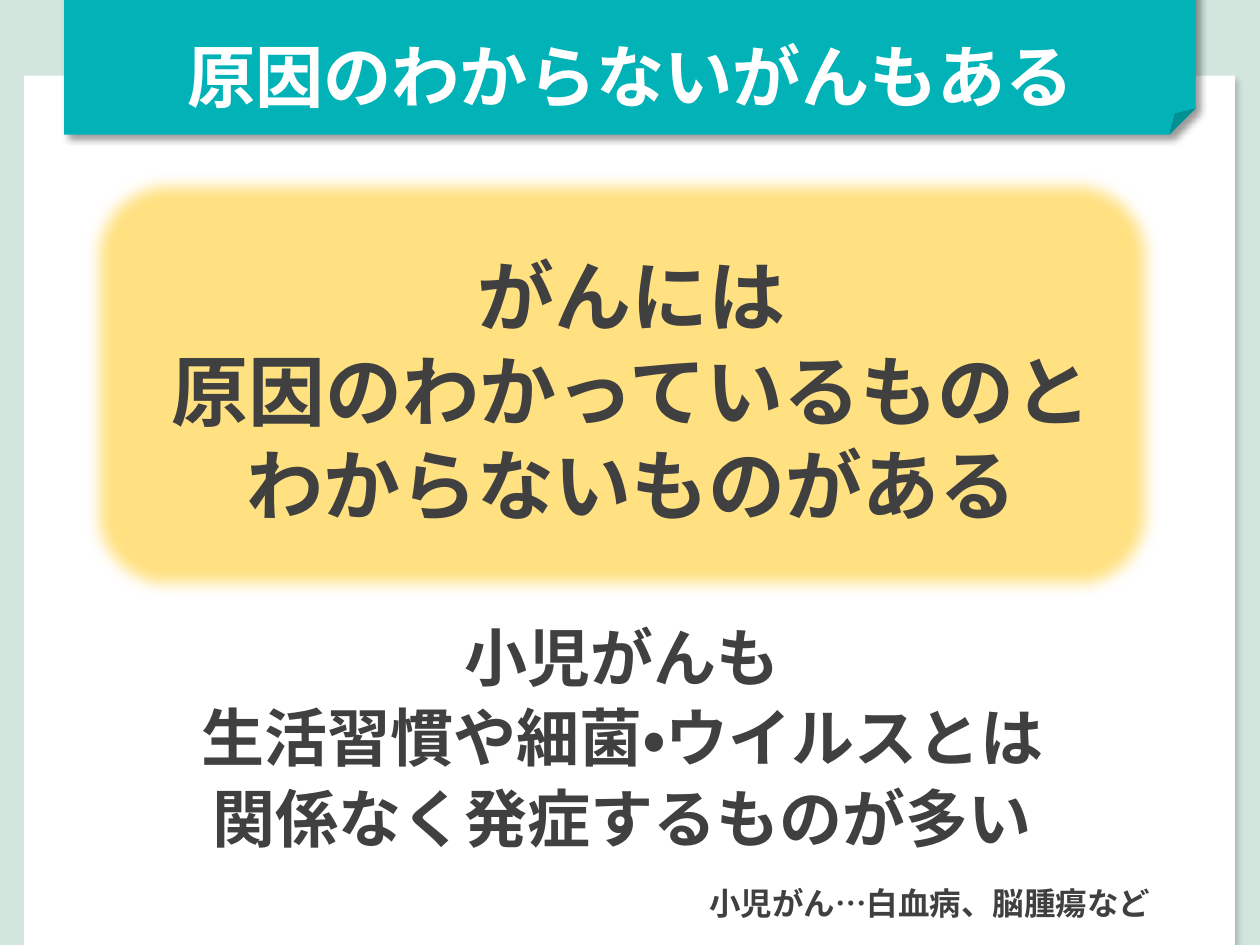
from lxml import etree
from pptx import Presentation, util as u
from pptx.dml.color import RGBColor
from pptx.enum import lang, shapes, text
from pptx.oxml.ns import qn

UNIT = u.Inches(0.1)  # the slide is a grid of 100 columns by 75 rows
COLS, ROWS = 100, 75
HUES = {"back": "D2E6DE", "page": "FFFFFF", "band": "01B3B7",
        "panel": "FFE181", "ink": "404040", "shade": "000000"}
KIND = shapes.MSO_SHAPE
FACE = "TeX Gyre Adventor"


def hue(name):
    return RGBColor.from_string(HUES[name])


def place(box, x, y, w, h):
    """Turn an offset and size inside a box into lengths on the slide."""
    return [int(n * UNIT) for n in (box[0] + x, box[1] + y, w, h)]


def node(parent, tag, **attrs):
    item = etree.SubElement(parent, qn(tag))
    for key, val in attrs.items():
        item.set(key, str(val))
    return item


def block(host, kind, spot, fill=None):
    shape = host.add_shape(kind, *spot)
    shape.shadow.inherit = False
    shape.line.fill.background()
    if fill:
        shape.fill.solid()
        shape.fill.fore_color.rgb = hue(fill)
    else:
        shape.fill.background()
    return shape


def shade(shape, alpha, blur, dist):
    """Cast a shadow down and to the right; lengths in points."""
    list_ = shape.element.spPr.find(qn("a:effectLst"))
    outer = node(list_, "a:outerShdw", blurRad=u.Pt(blur), dist=u.Pt(dist),
                 dir=45 * 60000, algn="tl", rotWithShape=0)
    tone = node(outer, "a:srgbClr", val=HUES["shade"])
    node(tone, "a:alpha", val=alpha * 1000)


def write(shape, lines, size, ink="ink", face=FACE, pitch=None,
          align=text.PP_ALIGN.CENTER, anchor=text.MSO_ANCHOR.TOP):
    """Fill a shape; a line is a list of (words, letter spacing) pairs."""
    frame = shape.text_frame
    look = {"word_wrap": True, "vertical_anchor": anchor,
            "auto_size": text.MSO_AUTO_SIZE.SHAPE_TO_FIT_TEXT}
    for key, val in look.items():
        setattr(frame, key, val)
    style = {"size": u.Pt(size), "bold": True, "name": face,
             "language_id": lang.MSO_LANGUAGE_ID.JAPANESE}
    for i, line in enumerate(lines):
        para = frame.add_paragraph() if i else frame.paragraphs[0]
        para.alignment = align
        if pitch:
            para.line_spacing = u.Pt(pitch)
        for words, gap in line:
            for j, piece in enumerate(words.split("\n")):
                if j:
                    para.add_line_break()
                run = para.add_run()
                run.text = piece
                for key, val in style.items():
                    setattr(run.font, key, val)
                run.font.color.rgb = hue(ink)
                if gap:
                    run.font._element.set("spc", str(gap * 100))


def page(slide, box):
    """Lay the white sheet, an upright rectangle turned on its side."""
    wide, high = box[2:]
    spot = place(box, (wide - high) / 2, (high - wide) / 2, high, wide)
    sheet = block(slide.shapes, KIND.RECTANGLE, spot, "page")
    sheet.rotation = 270
    shade(sheet, 18, 3, 4)


def header(slide, box):
    band = block(slide.shapes, KIND.FOLDED_CORNER, place(box, 0, 0, *box[2:]), "band")
    shade(band, 40, 4, 3)
    title = slide.shapes.add_textbox(*place(box, -1.5, 4.1, box[2] + 3.1, 7.7))
    write(title, [[("原因のわからないがんもある", 0)]], 39, "page")


def panel(slide, box):
    group = slide.shapes.add_group_shape().shapes
    card = block(group, KIND.ROUNDED_RECTANGLE, place(box, 0, 0, *box[2:]), "panel")
    node(card.element.spPr.find(qn("a:effectLst")), "a:softEdge", rad=u.Pt(9))
    label = group.add_textbox(*place(box, 2.4, 5.4, box[2] - 3.3, 23.7))
    write(label, [[("がんには\n原因のわかっているものと", 0)],
                  [("わからないものがある", 0)]], 44, pitch=54)


def message(slide, box):
    label = slide.shapes.add_textbox(*place(box, 0, 0, *box[2:]))
    write(label, [[("小児がんも", 0)],
                  [("生活習慣や細", 0), ("菌", -7), ("・", -10), ("ウイルスとは", 0)],
                  [("関係なく発症するものが多い", 0)]], 36, pitch=46)


def note(slide, box):
    label = block(slide.shapes, KIND.ROUNDED_RECTANGLE, place(box, 0, 0, *box[2:]))
    write(label, [[("小児がん…白血病、脳腫瘍など", 0)]], 18, face="Arial",
          align=text.PP_ALIGN.LEFT, anchor=text.MSO_ANCHOR.MIDDLE)


def main():
    deck = Presentation()
    deck.slide_width, deck.slide_height = COLS * UNIT, ROWS * UNIT
    slide = deck.slides.add_slide(deck.slide_layouts[6])
    back = slide.background.fill
    back.solid()
    back.fore_color.rgb = hue("back")
    page(slide, (1.9, 6, 96.1, 70.7))
    header(slide, (5.1, -1.9, 89.8, 12.6))
    message(slide, (11.8, 48.2, 75.2, 20.3))
    panel(slide, (6.8, 13.7, 85.2, 33.7))
    note(slide, (55.1, 69.4, 41.9, 4.5))
    deck.save("out.pptx")


if __name__ == "__main__":
    main()
